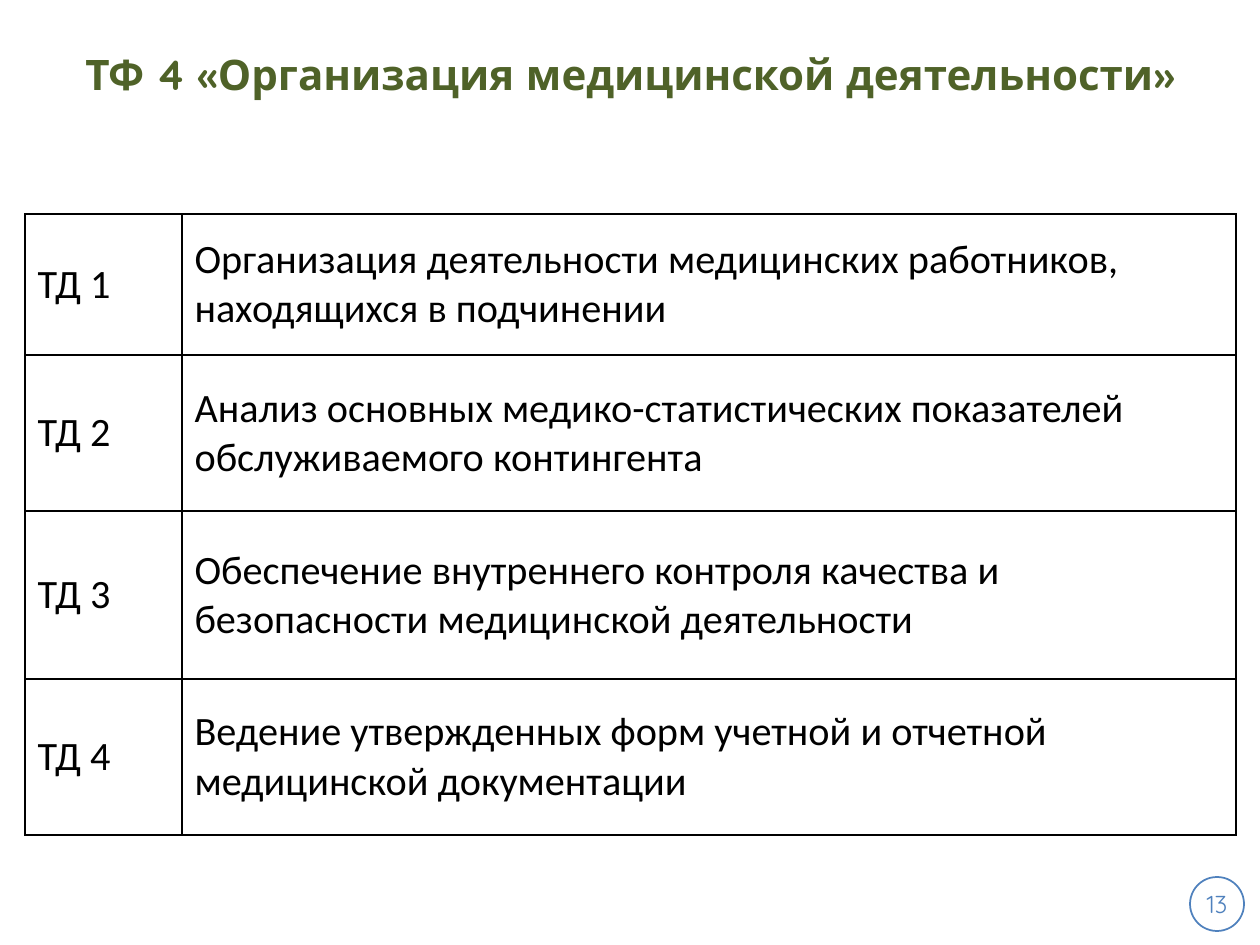
from pptx import Presentation
from pptx.dml.color import RGBColor
from pptx.enum.shapes import MSO_SHAPE as Shape
from pptx.enum.text import MSO_ANCHOR as Anchor, PP_ALIGN as Align
from pptx.oxml import parse_xml
from pptx.oxml.ns import nsdecls
from pptx.util import Pt

TITLE = "ТФ 4 «Организация медицинской деятельности»"
PAGE = "13"
ROWS = [
    ("ТД 1", "Организация деятельности медицинских работников, находящихся в подчинении"),
    ("ТД 2", "Анализ основных медико-статистических показателей обслуживаемого контингента"),
    ("ТД 3", "Обеспечение внутреннего контроля качества и безопасности медицинской деятельности"),
    ("ТД 4", "Ведение утвержденных форм учетной и отчетной медицинской документации"),
]
WIDTHS = [157, 1054]
HEIGHTS = [141, 156, 168, 156]

GREEN = RGBColor(0x4F, 0x62, 0x28)
BLUE = RGBColor(0x4F, 0x81, 0xBD)
BLACK = RGBColor(0, 0, 0)
SCALE = 914400 / 126


def px(n):
    return round(n * SCALE)


def write(frame, text, face, size, color, align=Align.LEFT, bold=False):
    frame.text = text
    frame.word_wrap = True
    frame.vertical_anchor = Anchor.MIDDLE
    para = frame.paragraphs[0]
    para.alignment = align
    font = para.runs[0].font
    font.name, font.size, font.bold = face, Pt(size), bold
    font.color.rgb = color


def border(cell):
    props = cell._tc.get_or_add_tcPr()
    for i, side in enumerate(("lnL", "lnR", "lnT", "lnB")):
        props.insert(i, parse_xml(
            f'<a:{side} {nsdecls("a")} w="{Pt(1)}"><a:solidFill>'
            f'<a:srgbClr val="{BLACK}"/></a:solidFill></a:{side}>'))


def add_grid(slide):
    grid = slide.shapes.add_table(
        len(ROWS), len(WIDTHS), px(25), px(214),
        px(sum(WIDTHS)), px(sum(HEIGHTS))).table
    grid.first_row = grid.horz_banding = False
    for col, width in zip(grid.columns, WIDTHS):
        col.width = px(width)
    for row, height, texts in zip(grid.rows, HEIGHTS, ROWS):
        row.height = px(height)
        for cell, text in zip(row.cells, texts):
            write(cell.text_frame, text, "Calibri", 23, BLACK)
            cell.vertical_anchor = Anchor.MIDDLE
            cell.fill.background()
            border(cell)


def add_badge(slide):
    badge = slide.shapes.add_shape(Shape.OVAL, px(1190), px(877), px(54), px(54))
    badge.shadow.inherit = False
    badge.fill.background()
    badge.line.color.rgb = BLUE
    badge.line.width = Pt(1)
    frame = badge.text_frame
    frame.margin_left = frame.margin_right = 0
    frame.margin_top = frame.margin_bottom = 0
    write(frame, PAGE, "Quicksand", 14, BLUE, Align.CENTER)


def main():
    deck = Presentation()
    deck.slide_width, deck.slide_height = px(1260), px(945)
    slide = deck.slides.add_slide(deck.slide_layouts[5])
    title = slide.shapes.title
    title.left, title.top, title.width, title.height = 0, 0, px(1260), px(147)
    write(title.text_frame, TITLE, "Quicksand", 24, GREEN, Align.CENTER, True)
    add_grid(slide)
    add_badge(slide)
    deck.save("out.pptx")


if __name__ == "__main__":
    main()
